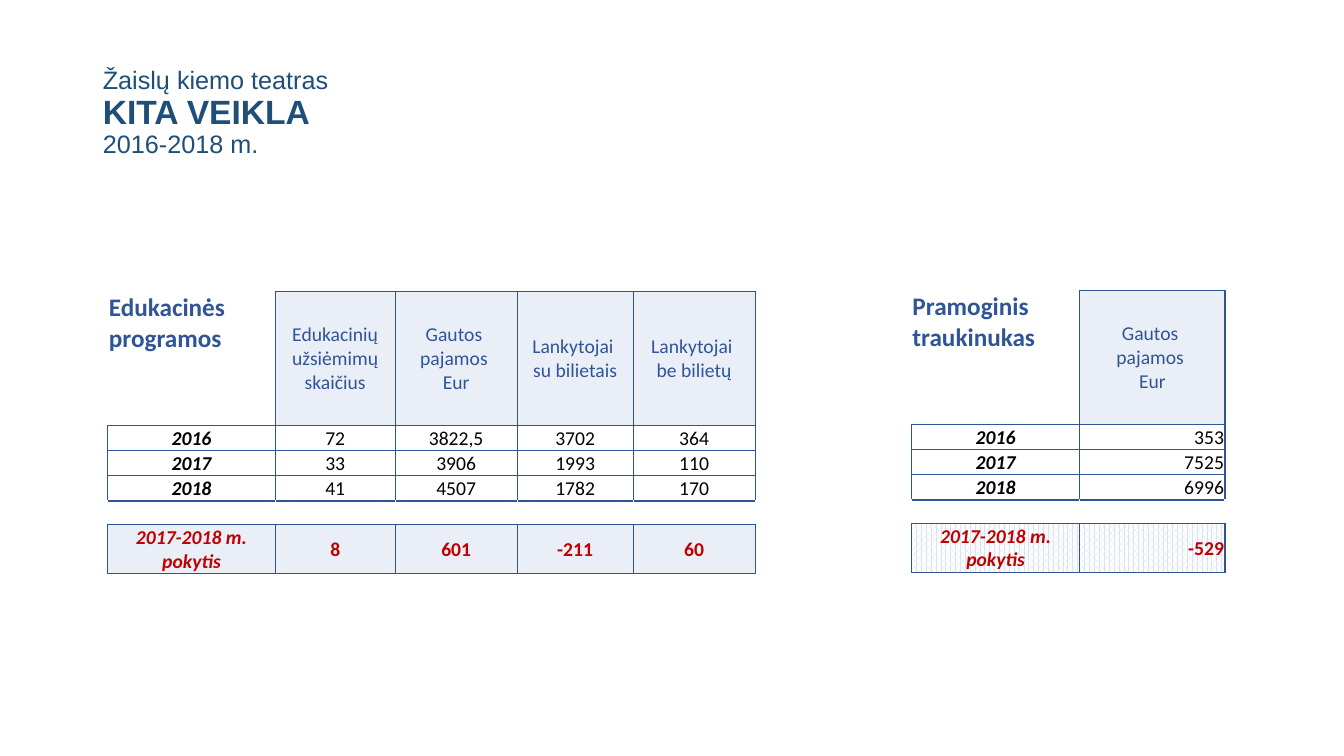
from lxml import etree
from pptx import Presentation
from pptx.dml.color import RGBColor
from pptx.enum.dml import MSO_PATTERN
from pptx.enum.text import MSO_ANCHOR as Anchor, MSO_AUTO_SIZE, PP_ALIGN as Align
from pptx.oxml.ns import qn
from pptx.util import Inches, Pt

BLUE, NAVY, RED, BLACK, WHITE = "2F5597", "1F4E79", "C00000", "000000", "FFFFFF"
PALE, PATTERN_BLUE = "EAEFF7", "DAE3F3"
ROW_HEIGHTS = [1.33, 0.25, 0.25, 0.25, 0.23, 0.49]
SPACER_ROW, CHANGE_ROW = 4, 5
CHANGE_LABEL = "2017-2018 m. pokytis"

PROGRAMMES = [
    ["Edukacinės programos", "Edukacinių\n užsiėmimų \nskaičius", "Gautos \npajamos \nEur",
     "Lankytojai \nsu bilietais", "Lankytojai \nbe bilietų"],
    ["2016", "72", "3822,5", "3702", "364"],
    ["2017", "33", "3906", "1993", "110"],
    ["2018", "41", "4507", "1782", "170"],
    [""] * 5,
    [CHANGE_LABEL, "8", "601", "-211", "60"],
]
TRAIN = [
    ["Pramoginis traukinukas", "Gautos \npajamos \nEur"],
    ["2016", "353"],
    ["2017", "7525"],
    ["2018", "6996"],
    [""] * 2,
    [CHANGE_LABEL, "-529"],
]


def rgb(color):
    return RGBColor.from_string(color)


def format_font(font, name, size, color, bold=False, italic=False):
    font.name, font.size = name, Pt(size)
    font.bold, font.italic = bold, italic
    font.color.rgb = rgb(color)


def add_title(slide):
    title = slide.shapes.title
    title.left, title.top = Inches(0.92), Inches(0.4)
    title.width, title.height = Inches(11.5), Inches(1.45)
    frame = title.text_frame
    frame.text = "Žaislų kiemo teatras \vKITA VEIKLA\v2016-2018 m."
    frame.auto_size = MSO_AUTO_SIZE.NONE
    frame.vertical_anchor = Anchor.MIDDLE
    paragraph = frame.paragraphs[0]
    paragraph.alignment, paragraph.line_spacing = Align.LEFT, 0.9
    for run, size in zip(paragraph.runs, (18, 24, 18)):
        format_font(run.font, "Arial", size, NAVY, bold=size == 24)


def set_borders(cell, white_sides):
    properties = cell._tc.get_or_add_tcPr()
    for side in "LRTB":
        line = etree.SubElement(properties, qn(f"a:ln{side}"), w=str(Pt(1)))
        fill = etree.SubElement(line, qn("a:solidFill"))
        color = WHITE if side in white_sides else BLUE
        etree.SubElement(fill, qn("a:srgbClr"), val=color)


def fill_cell(cell, color, patterned=False):
    if color is None:
        cell.fill.background()
    elif patterned:
        cell.fill.patterned()
        cell.fill.pattern = MSO_PATTERN.PERCENT_70
        cell.fill.fore_color.rgb = rgb(color)
        cell.fill.back_color.rgb = rgb(WHITE)
    else:
        cell.fill.solid()
        cell.fill.fore_color.rgb = rgb(color)


def write_cell(cell, text, row, column, value_alignment):
    cell.margin_left = cell.margin_right = cell.margin_top = Inches(0.01)
    cell.margin_bottom = 0
    frame = cell.text_frame
    frame.text = text
    if not text:
        end = etree.SubElement(frame.paragraphs[0]._p, qn("a:endParaRPr"))
        end.set("sz", "1000")
        return
    corner = row == column == 0
    label = column == 0
    size = 18 if corner else 14
    color = {0: BLUE, CHANGE_ROW: RED}.get(row, BLACK)
    alignment = Align.CENTER if label or row == 0 else value_alignment
    for paragraph in frame.paragraphs:
        paragraph.alignment = Align.LEFT if corner else alignment
        for run in paragraph.runs:
            format_font(run.font, "Calibri", size, color,
                        bold=label or row == CHANGE_ROW, italic=label and row > 0)
    if corner:
        cell.vertical_anchor = Anchor.TOP
    elif row in (0, CHANGE_ROW) or alignment == Align.RIGHT:
        cell.vertical_anchor = Anchor.MIDDLE
    else:
        cell.vertical_anchor = Anchor.BOTTOM


def add_year_table(slide, left, top, widths, data, value_alignment,
                   body_fill=None, patterned_change=False):
    frame = slide.shapes.add_table(len(data), len(widths), Inches(left), Inches(top),
                                   Inches(sum(widths)), Inches(sum(ROW_HEIGHTS)))
    table = frame.table
    table.first_row = table.horz_banding = False
    for column, width in zip(table.columns, widths):
        column.width = Inches(width)
    for row, height in zip(table.rows, ROW_HEIGHTS):
        row.height = Inches(height)
    for r, texts in enumerate(data):
        for c, text in enumerate(texts):
            cell = table.cell(r, c)
            corner = r == c == 0
            set_borders(cell, "LT" if corner else "LR" if r == SPACER_ROW else "")
            if corner:
                fill_cell(cell, WHITE)
            elif r == CHANGE_ROW and patterned_change:
                fill_cell(cell, PATTERN_BLUE, patterned=True)
            else:
                fill_cell(cell, PALE if r in (0, CHANGE_ROW) else body_fill)
            write_cell(cell, text, r, c, value_alignment)


def main():
    presentation = Presentation()
    presentation.slide_width, presentation.slide_height = Inches(13.33), Inches(7.5)
    slide = presentation.slides.add_slide(presentation.slide_layouts[5])
    add_title(slide)
    add_year_table(slide, 1.07, 2.89, [1.66, 1.19, 1.21, 1.15, 1.21],
                   PROGRAMMES, Align.CENTER)
    add_year_table(slide, 9.04, 2.88, [1.67, 1.44], TRAIN, Align.RIGHT,
                   body_fill=WHITE, patterned_change=True)
    presentation.save("out.pptx")


if __name__ == "__main__":
    main()
